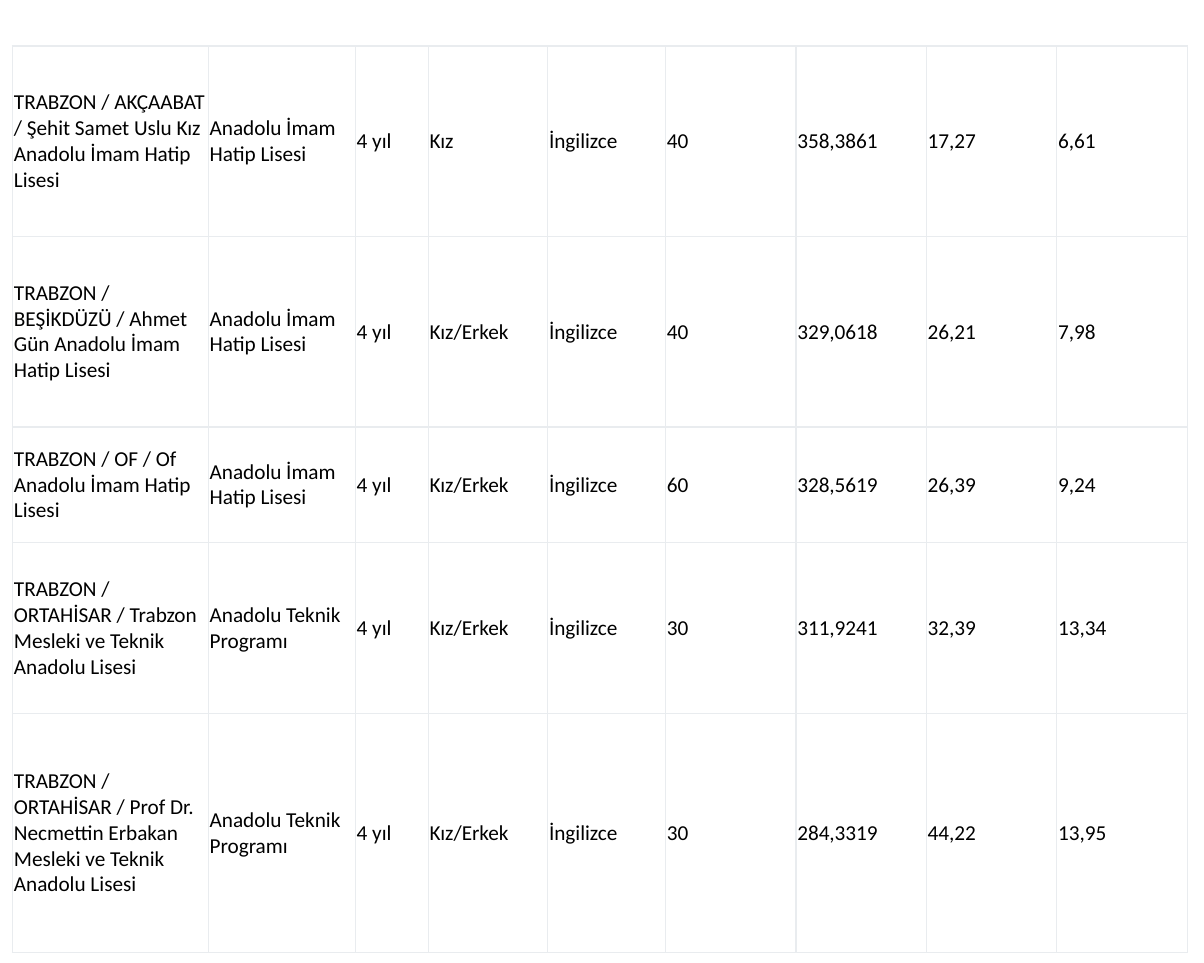
from dataclasses import dataclass

from lxml import etree
from pptx import Presentation
from pptx.dml.color import RGBColor
from pptx.enum.text import MSO_ANCHOR
from pptx.oxml.ns import qn
from pptx.util import Pt

MIDDLE = MSO_ANCHOR.MIDDLE
BLANK = 6


@dataclass(frozen=True)
class Theme:
    font: str = "Calibri"
    size: float = 10
    ink: str = "000000"
    paper: str = "FFFFFF"
    rule: str = "E9ECEF"
    line: float = 0.75
    inset: float = 0.7


THEME = Theme()
WIDTH, HEIGHT = 566.93, 453.54
LEFT, TOP = 5.9, 21.6
COLS = [92.2, 69.2, 34.4, 56.2, 55.5] + [61.45] * 4
ROWS = [89.8, 89.8, 54.4, 80.6, 112.4]

IMAM = "Anadolu İmam Hatip Lisesi"
TECH = "Anadolu Teknik Programı"
MIXED = "Kız/Erkek"
SCHOOLS = [
    ("AKÇAABAT / Şehit Samet Uslu Kız Anadolu İmam Hatip Lisesi",
     IMAM, "Kız", "40", "358,3861", "17,27", "6,61"),
    ("BEŞİKDÜZÜ / Ahmet Gün Anadolu İmam Hatip Lisesi",
     IMAM, MIXED, "40", "329,0618", "26,21", "7,98"),
    ("OF / Of Anadolu İmam Hatip Lisesi",
     IMAM, MIXED, "60", "328,5619", "26,39", "9,24"),
    ("ORTAHİSAR / Trabzon Mesleki ve Teknik Anadolu Lisesi",
     TECH, MIXED, "30", "311,9241", "32,39", "13,34"),
    ("ORTAHİSAR / Prof Dr. Necmettin Erbakan Mesleki ve Teknik Anadolu Lisesi",
     TECH, MIXED, "30", "284,3319", "44,22", "13,95"),
]


def add_rules(cell):
    props = cell._tc.get_or_add_tcPr()
    for side in ("a:lnL", "a:lnR", "a:lnT", "a:lnB"):
        line = etree.SubElement(props, qn(side), w=str(Pt(THEME.line)))
        fill = etree.SubElement(line, qn("a:solidFill"))
        etree.SubElement(fill, qn("a:srgbClr"), val=THEME.rule)


def fill_cell(cell, text):
    add_rules(cell)
    cell.fill.solid()
    cell.fill.fore_color.rgb = RGBColor.from_string(THEME.paper)
    cell.vertical_anchor = MIDDLE
    cell.margin_left = cell.margin_right = Pt(THEME.inset)
    cell.margin_top = cell.margin_bottom = Pt(THEME.inset)
    cell.text_frame.text = text
    font = cell.text_frame.paragraphs[0].runs[0].font
    font.name = THEME.font
    font.size = Pt(THEME.size)
    font.color.rgb = RGBColor.from_string(THEME.ink)


def add_grid(slide, rows):
    frame = slide.shapes.add_table(
        len(ROWS), len(COLS), Pt(LEFT), Pt(TOP), Pt(sum(COLS)), Pt(sum(ROWS)))
    table = frame.table
    table.first_row = False
    table.horz_banding = False
    for col, width in zip(table.columns, COLS):
        col.width = Pt(width)
    for row, height, texts in zip(table.rows, ROWS, rows):
        row.height = Pt(height)
        for cell, text in zip(row.cells, texts):
            fill_cell(cell, text)


def main():
    deck = Presentation()
    deck.slide_width = Pt(WIDTH)
    deck.slide_height = Pt(HEIGHT)
    slide = deck.slides.add_slide(deck.slide_layouts[BLANK])
    rows = [
        (f"TRABZON / {school}", kind, "4 yıl", group, "İngilizce", *marks)
        for school, kind, group, *marks in SCHOOLS
    ]
    add_grid(slide, rows)
    deck.save("out.pptx")


if __name__ == "__main__":
    main()
